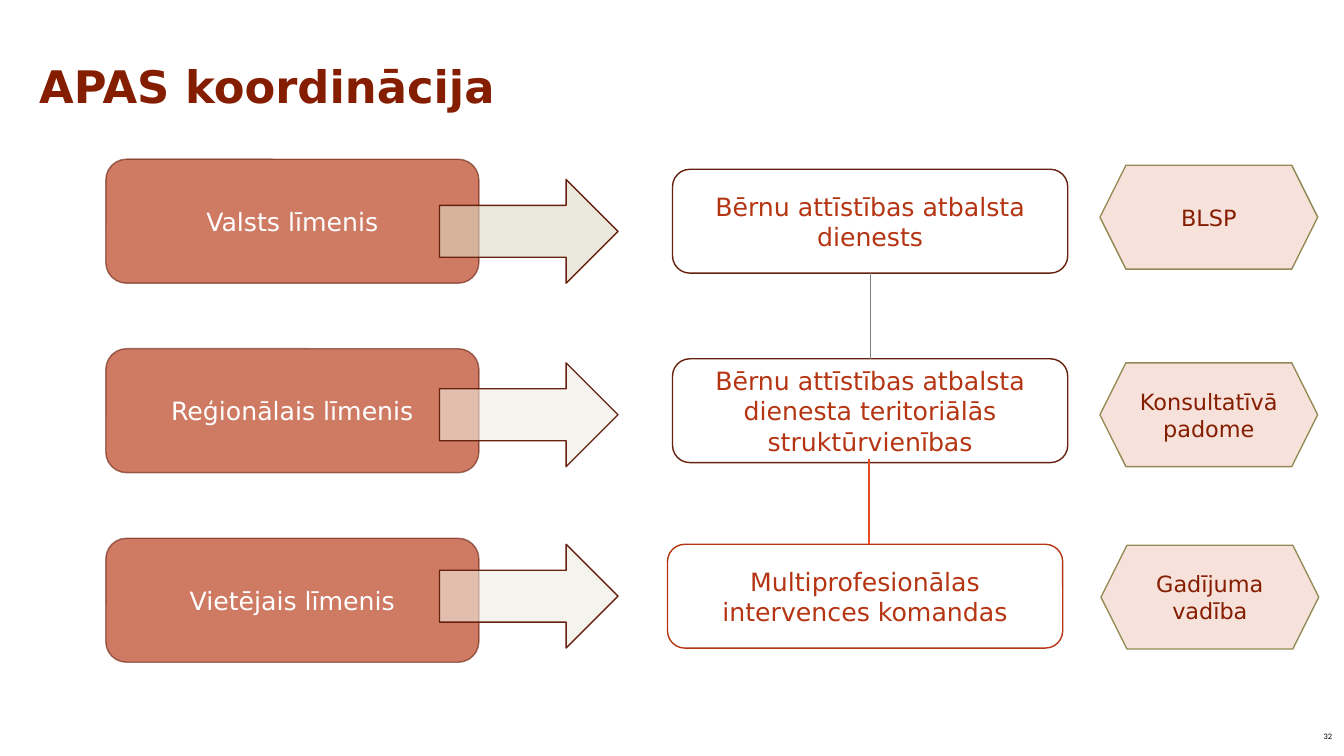
from lxml import etree
from pptx import Presentation
from pptx.dml.color import RGBColor
from pptx.enum.shapes import MSO_CONNECTOR, MSO_SHAPE
from pptx.enum.text import MSO_ANCHOR, PP_ALIGN
from pptx.oxml.ns import qn
from pptx.util import Inches, Pt

ROUNDED = MSO_SHAPE.ROUNDED_RECTANGLE
ARROW = MSO_SHAPE.RIGHT_ARROW
HEXAGON = MSO_SHAPE.HEXAGON
STRAIGHT = MSO_CONNECTOR.STRAIGHT
TOP, MIDDLE = MSO_ANCHOR.TOP, MSO_ANCHOR.MIDDLE
LEFT, CENTER = PP_ALIGN.LEFT, PP_ALIGN.CENTER

BROWN, RUST, DARK_RED = "66210F", "B53513", "851D00"
BRICK, BLUSH, OLIVE = "B22600", "F5D8CF", "948A54"
WHITE, BLACK, GREY, ORANGE = "FFFFFF", "000000", "7F7F7F", "E84C22"


def rgb(value):
    return RGBColor.from_string(value)


def set_opacity(element, percent):
    """Add an alpha value to the solid colour below a fill or line element."""
    color = next(element.iter(qn("a:srgbClr")))
    etree.SubElement(color, qn("a:alpha")).set("val", str(percent * 1000))


class SlideBuilder:
    font = "DejaVu Sans"
    line_width = Pt(1)

    def __init__(self, slide):
        self.slide = slide

    def set_text(self, frame, text, size, color, align=CENTER, anchor=MIDDLE,
                 bold=False, font=None, spacing=None):
        frame.word_wrap = True
        frame.vertical_anchor = anchor
        paragraph = frame.paragraphs[0]
        paragraph.text = text
        paragraph.alignment = align
        paragraph.line_spacing = spacing
        paragraph.font.name = font or self.font
        paragraph.font.size = Pt(size)
        paragraph.font.bold = bold
        paragraph.font.color.rgb = rgb(color)

    def text(self, left, top, width, height, text, size, color, **style):
        box = self.slide.shapes.add_textbox(
            Inches(left), Inches(top), Inches(width), Inches(height))
        self.set_text(box.text_frame, text, size, color, **style)

    def shape(self, kind, left, top, width, height, line, fill=None,
              opacity=100, line_opacity=100):
        shape = self.slide.shapes.add_shape(
            kind, Inches(left), Inches(top), Inches(width), Inches(height))
        shape.shadow.inherit = False
        shape.line.color.rgb = rgb(line)
        shape.line.width = self.line_width
        properties = shape._element.spPr
        if line_opacity < 100:
            set_opacity(properties.find(qn("a:ln")), line_opacity)
        if fill:
            shape.fill.solid()
            shape.fill.fore_color.rgb = rgb(fill)
            set_opacity(properties.find(qn("a:solidFill")), opacity)
        else:
            shape.fill.background()
        return shape

    def vertical_line(self, x, top, bottom, color, width):
        line = self.slide.shapes.add_connector(
            STRAIGHT, Inches(x), Inches(top), Inches(x), Inches(bottom))
        line.line.color.rgb = rgb(color)
        line.line.width = Pt(width)
        etree.SubElement(line._element.spPr, qn("a:effectLst"))


LEVELS = ["Valsts līmenis", "Reģionālais līmenis", "Vietējais līmenis"]
ARROWS = [(1.78, "DDD9C3"), (3.6, "EEECE1"), (5.4, "EEECE1")]
UNITS = [
    (6.67, 1.68, BROWN, "Bērnu attīstības atbalsta dienests"),
    (6.67, 3.56, BROWN,
     "Bērnu attīstības atbalsta dienesta teritoriālās struktūrvienības"),
    (6.62, 5.4, RUST, "Multiprofesionālas intervences komandas"),
]
BODIES = [
    (10.91, 1.64, "BLSP"),
    (10.91, 3.6, "Konsultatīvā padome"),
    (10.92, 5.41, "Gadījuma vadība"),
]


def main():
    presentation = Presentation()
    presentation.slide_width = Inches(13.33)
    presentation.slide_height = Inches(7.5)
    builder = SlideBuilder(
        presentation.slides.add_slide(presentation.slide_layouts[6]))

    builder.text(0.29, 0.59, 11.5, 1.45, "APAS koordinācija", 32, DARK_RED,
                 align=LEFT, anchor=TOP, bold=True, spacing=0.9)

    for row, level in enumerate(LEVELS):
        box = builder.shape(ROUNDED, 1.05, 1.58 + 1.88 * row, 3.7, 1.23,
                            BROWN, BRICK, opacity=61, line_opacity=60)
        builder.set_text(box.text_frame, level, 18, WHITE)

    for top, fill in ARROWS:
        builder.shape(ARROW, 4.36, top, 1.77, 1.03, BROWN, fill, opacity=60)

    for left, top, outline, unit in UNITS:
        box = builder.shape(ROUNDED, left, top, 3.92, 1.03, outline)
        builder.set_text(box.text_frame, unit, 18, RUST)

    builder.vertical_line(8.63, 2.71, 3.56, GREY, 0.75)
    builder.vertical_line(8.62, 4.55, 5.4, ORANGE, 1)

    for left, top, body in BODIES:
        hexagon = builder.shape(HEXAGON, left, top, 2.16, 1.03, OLIVE, BLUSH,
                                opacity=73)
        builder.set_text(hexagon.text_frame, body, 16, DARK_RED)

    builder.text(13.01, 7.1, 0.32, 0.4, "32", 6, BLACK, font="Calibri")

    presentation.save("out.pptx")


if __name__ == "__main__":
    main()
